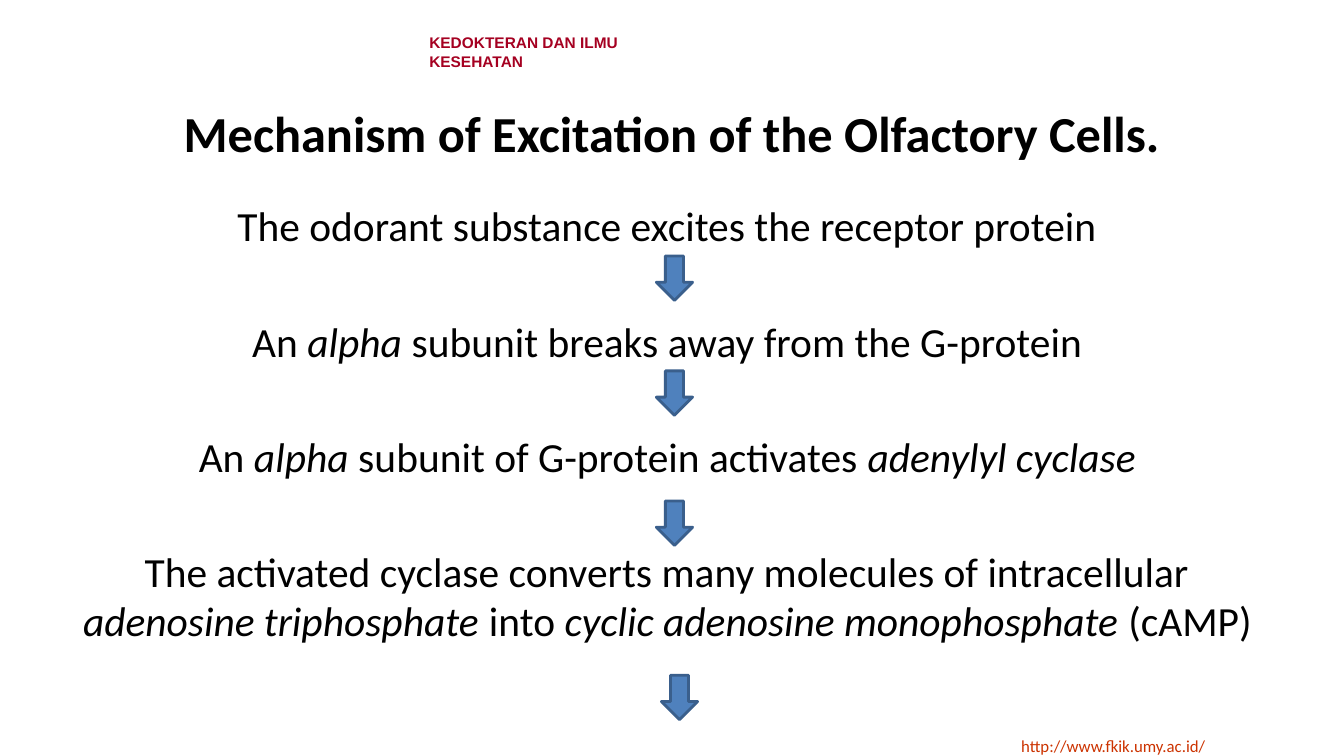
from pptx import Presentation
from pptx.dml.color import RGBColor
from pptx.enum.shapes import MSO_SHAPE
from pptx.enum.text import MSO_ANCHOR, PP_ALIGN
from pptx.util import Inches, Pt

COLORS = {
    "white": "FFFFFF",
    "black": "000000",
    "faculty": "A50021",
    "address": "CC3300",
    "arrow": "4F81BD",
    "arrow_edge": "3A5F8C",
}

FACULTY = {"name": "Arial", "size": Pt(11), "bold": True}
ADDRESS = {"name": "Calibri", "size": Pt(12)}
TITLE = {"name": "Calibri", "size": Pt(36), "bold": True}
BODY = {"name": "Calibri", "size": Pt(29.6)}

# Each step is a list of (text, italic) spans.
STEPS = [
    [("The odorant substance excites the receptor protein", False)],
    [("An ", False), ("alpha ", True),
     ("subunit breaks away from the G-protein", False)],
    [("An ", False), ("alpha ", True),
     ("subunit of G-protein activates ", False), ("adenylyl cyclase", True)],
    [("The activated cyclase converts many molecules of intracellular ", False),
     ("adenosine triphosphate ", True), ("into ", False),
     ("cyclic adenosine monophosphate ", True), ("(cAMP)", False)],
]
STEP_GAP = Pt(46.7)
ARROW_PLACES = [(6.51, 2.54), (6.51, 3.68), (6.51, 4.97), (6.56, 6.7)]


def color(name):
    return RGBColor.from_string(COLORS[name])


def add_span(para, text, font_format, font_color, italic=False):
    span = para.add_run()
    span.text = text
    for attribute, value in font_format.items():
        setattr(span.font, attribute, value)
    span.font.italic = italic
    span.font.color.rgb = color(font_color)


def add_text(page, place, paragraphs, font_format, font_color,
             align=PP_ALIGN.LEFT, anchor=MSO_ANCHOR.TOP, gap=Pt(0)):
    """Add a wrapped text box; gap is the space between its paragraphs."""
    box = page.shapes.add_textbox(*map(Inches, place))
    frame = box.text_frame
    frame.word_wrap = True
    frame.vertical_anchor = anchor
    for index, spans in enumerate(paragraphs):
        para = frame.add_paragraph() if index else frame.paragraphs[0]
        para.alignment = align
        if index:
            para.space_before = gap
        for text, italic in spans:
            add_span(para, text, font_format, font_color, italic)
    return box


def add_down_arrow(page, left, top):
    arrow = page.shapes.add_shape(MSO_SHAPE.DOWN_ARROW, Inches(left), Inches(top),
                                  Inches(0.36), Inches(0.44))
    arrow.shadow.inherit = False
    arrow.fill.solid()
    arrow.fill.fore_color.rgb = color("arrow")
    arrow.line.color.rgb = color("arrow_edge")
    arrow.line.width = Pt(2)


def main():
    deck = Presentation()
    deck.slide_width, deck.slide_height = Inches(13.33), Inches(7.5)
    page = deck.slides.add_slide(deck.slide_layouts[6])

    faculty = add_text(page, (4.16, 0.32, 2.4, 0.39),
                       [[("KEDOKTERAN DAN ILMU KESEHATAN", False)]],
                       FACULTY, "faculty", anchor=MSO_ANCHOR.MIDDLE)
    faculty.fill.solid()
    faculty.fill.fore_color.rgb = color("white")
    add_text(page, (10.03, 7.25, 2.73, 0.3),
             [[("http://www.fkik.umy.ac.id/", False)]], ADDRESS, "address")
    add_text(page, (0.68, 0.84, 11.97, 0.94),
             [[("Mechanism of Excitation of the Olfactory Cells.", False)]],
             TITLE, "black", PP_ALIGN.CENTER, MSO_ANCHOR.MIDDLE)
    add_text(page, (0.63, 1.94, 11.98, 4.76), STEPS, BODY, "black",
             PP_ALIGN.CENTER, gap=STEP_GAP)
    for left, top in ARROW_PLACES:
        add_down_arrow(page, left, top)

    deck.save("out.pptx")


if __name__ == "__main__":
    main()
